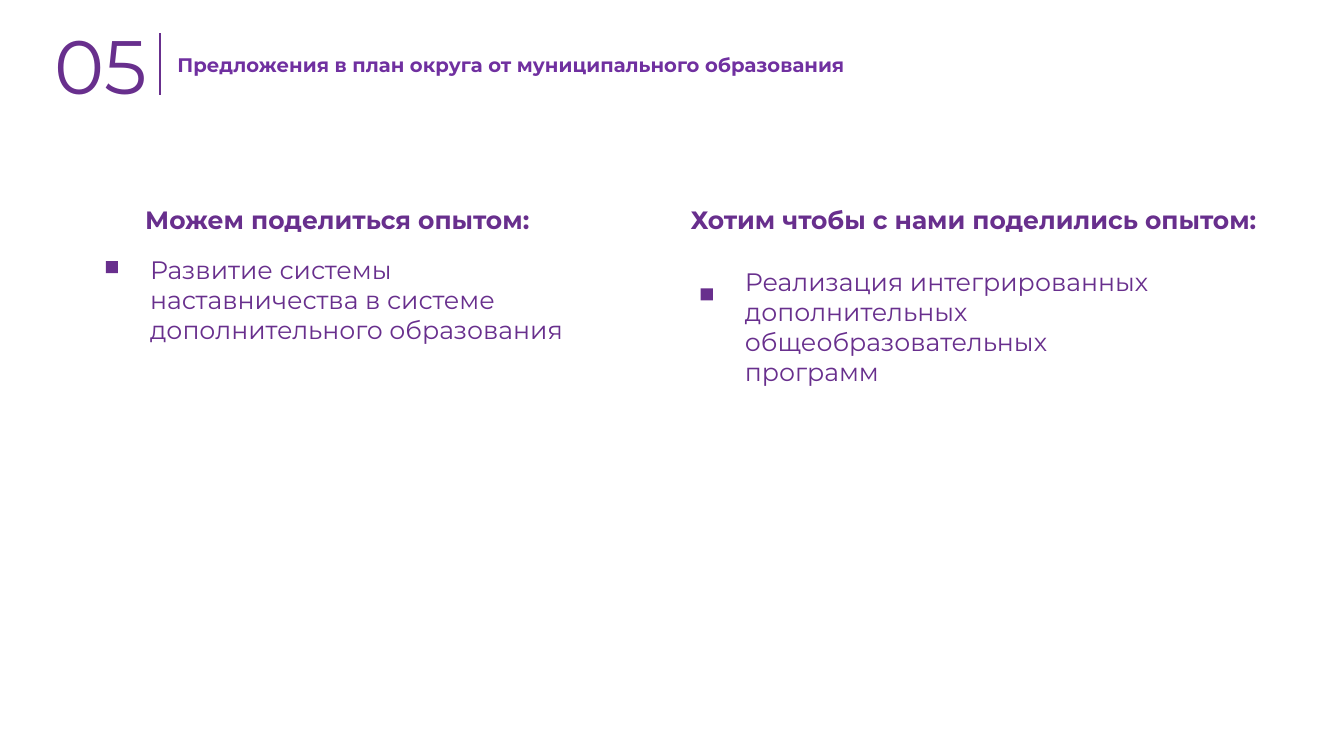
"""Builds the slide with a municipality's proposals for the district plan."""
from lxml.etree import SubElement
from pptx import Presentation
from pptx.dml.color import RGBColor
from pptx.enum.shapes import MSO_CONNECTOR, MSO_SHAPE
from pptx.oxml.ns import qn
from pptx.util import Inches, Pt

PURPLE = "682F8D"


def rgb(value):
    return RGBColor.from_string(value)


def add_text(s, text, box, size, bold=False, color=PURPLE, insets=(0, 0.01, 0, 0)):
    tf = s.shapes.add_textbox(*map(Inches, box)).text_frame
    tf.word_wrap = True
    for side, inset in zip(("left", "top", "right", "bottom"), insets):
        setattr(tf, f"margin_{side}", Inches(inset))
    r = tf.paragraphs[0].add_run()
    r.text = text
    for name, value in {"name": "Montserrat", "size": Pt(size), "bold": bold}.items():
        setattr(r.font, name, value)
    r.font.color.rgb = rgb(color)


prs = Presentation()
prs.slide_width, prs.slide_height = Inches(13.33), Inches(7.5)
s = prs.slides.add_slide(prs.slide_layouts[6])

add_text(s, "05", (0.54, 0.18, 1.02, 0.92), 54)
add_text(s, "Предложения в план округа от муниципального образования",
         (1.76, 0.52, 8.67, 0.24), 14, True, "7030A0")

divider = s.shapes.add_connector(MSO_CONNECTOR.STRAIGHT, Inches(1.59), Inches(0.33),
                                 Inches(1.59), Inches(0.94))
divider.line.color.rgb = rgb(PURPLE)
divider.line.width = Pt(1.42)
SubElement(divider._element.spPr, qn("a:effectLst"))

columns = [
    ("Можем поделиться опытом:", 1.44, 4.11,
     "Развитие системы наставничества в системе дополнительного образования",
     1.05, 2.59, 2.47),
    ("Хотим чтобы с нами поделились опытом:", 6.85, 5.88,
     "Реализация интегрированных дополнительных общеобразовательных программ",
     6.95, 2.86, 2.59),
]
for heading, left, width, body, marker_left, marker_top, body_top in columns:
    add_text(s, heading, (left, 2.02, width, 0.31), 17.9, True)
    sp = s.shapes.add_shape(MSO_SHAPE.RECTANGLE, Inches(marker_left), Inches(marker_top),
                            Inches(0.12), Inches(0.12))
    sp.shadow.inherit = False
    sp.fill.solid()
    sp.fill.fore_color.rgb = rgb(PURPLE)
    sp.line.fill.background()
    add_text(s, body, (marker_left + 0.34, body_top, 4.49, 1.01), 18,
             insets=(0.1, 0.05, 0.1, 0.05))

prs.save("out.pptx")
